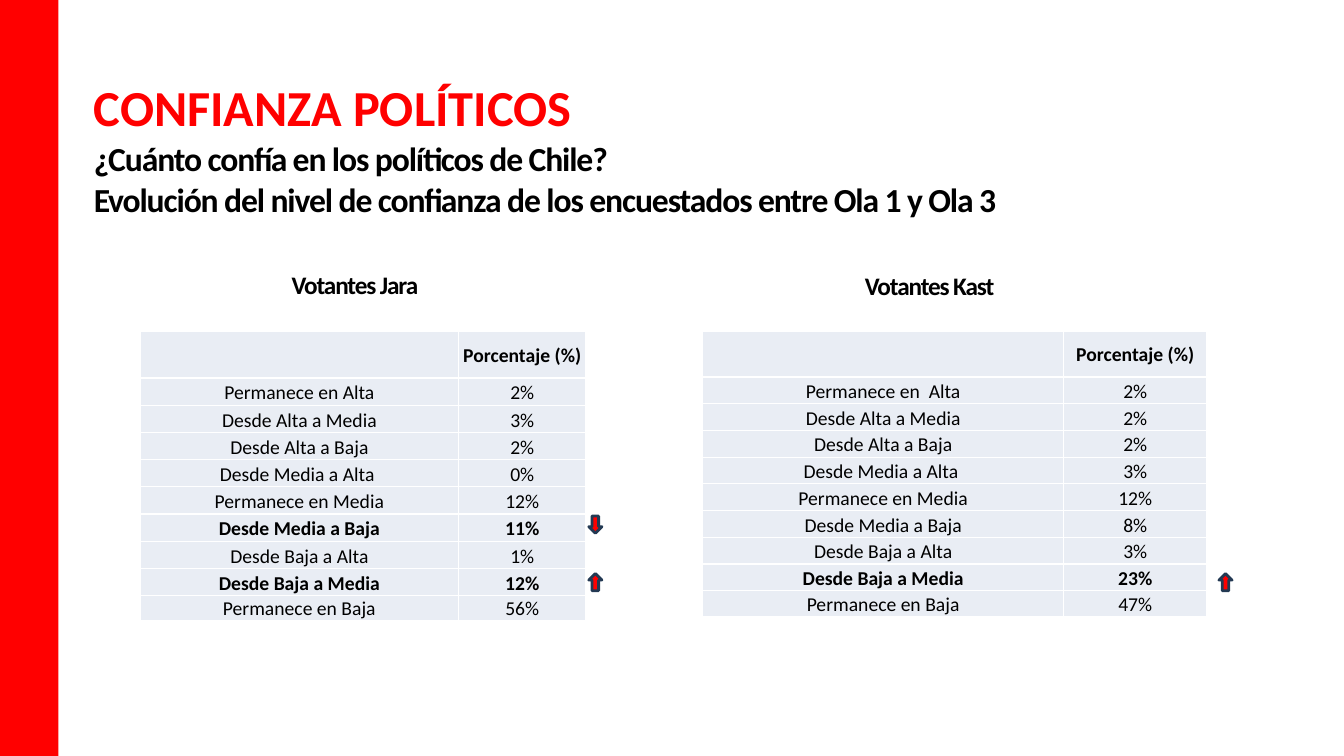
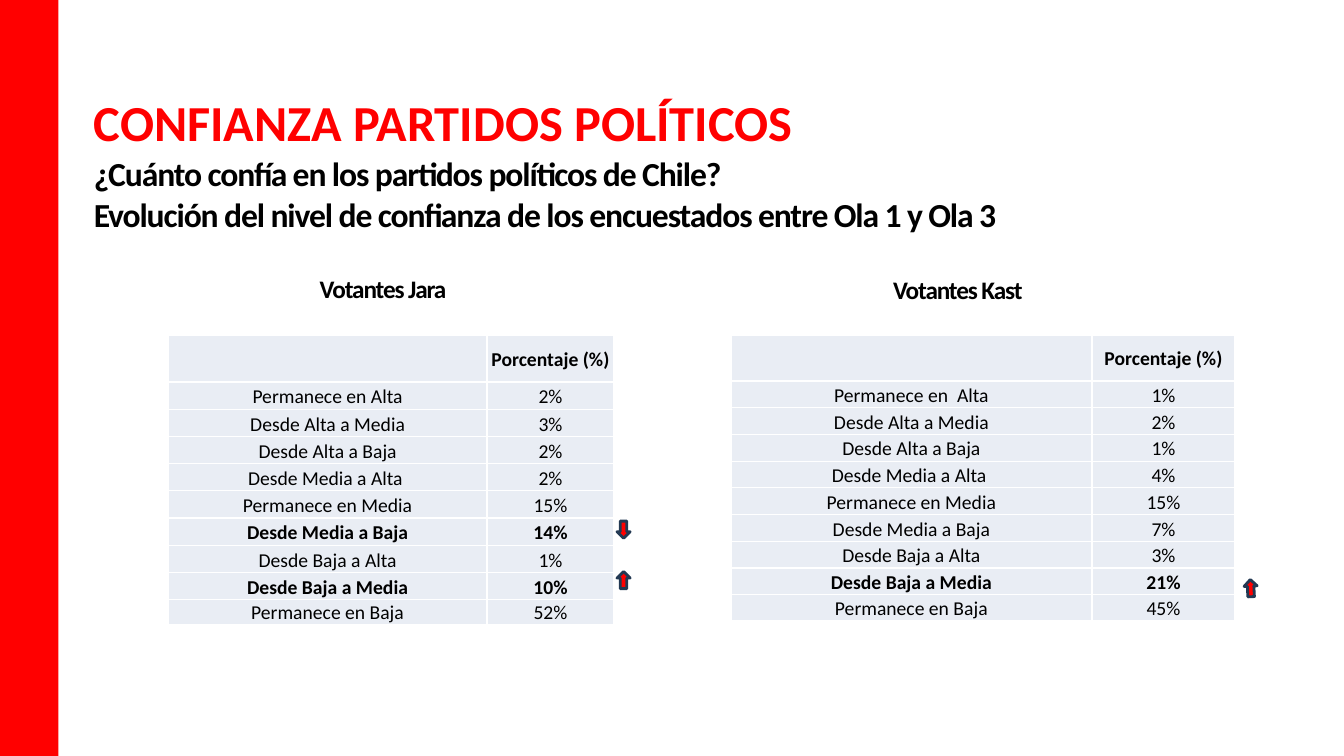
from dataclasses import dataclass

from lxml import etree
from pptx import Presentation
from pptx.dml.color import RGBColor
from pptx.enum.shapes import MSO_SHAPE
from pptx.enum.text import MSO_ANCHOR, MSO_AUTO_SIZE, PP_ALIGN
from pptx.oxml.ns import qn
from pptx.util import Inches, Pt

RECT, UP, DOWN = MSO_SHAPE.RECTANGLE, MSO_SHAPE.UP_ARROW, MSO_SHAPE.DOWN_ARROW
TOP, MIDDLE, BOTTOM = MSO_ANCHOR.TOP, MSO_ANCHOR.MIDDLE, MSO_ANCHOR.BOTTOM
LEFT, CENTER = PP_ALIGN.LEFT, PP_ALIGN.CENTER
FIXED = MSO_AUTO_SIZE.NONE
FONT = "Calibri"
RED, BLACK, WHITE, PALE, NAVY = "FF0000", "000000", "FFFFFF", "E9EDF4", "233953"
TITLE_ONLY = 5
TIGHT = -0.8
TREND = "Evolución del nivel de\u00a0confianza de los encuestados entre Ola 1 y Ola 3"
MOVES = ["Desde Alta a Media", "Desde Alta a Baja", "Desde Media a Alta ",
         "Permanece en Media", "Desde Media a Baja", "Desde Baja a Alta",
         "Desde Baja a Media", "Permanece en Baja"]


@dataclass(frozen=True)
class Group:
    """Layout of one voter group's table and caption."""
    name: str
    first: str
    left: float
    widths: tuple[float, float]
    head: float
    row: float
    last: float
    cap_x: float
    cap_y: float
    bold: tuple[int, ...]


@dataclass(frozen=True)
class Arrow:
    """A marker beside a table row."""
    kind: MSO_SHAPE
    left: float
    top: float
    turn: float = 0


@dataclass(frozen=True)
class Page:
    """Content of one slide."""
    title: str
    query: str
    title_y: float
    shift: float
    top: float
    shares: tuple[list[int], list[int]]
    arrows: list[Arrow]


GROUPS = (
    Group("Votantes Jara", "Permanece en Alta", 1.39, (3.16, 1.26),
          0.46, 0.27, 0.24, 2.02, -0.67, (5, 7)),
    Group("Votantes Kast", "Permanece en  Alta", 6.97, (3.58, 1.42),
          0.45, 0.265, 0.26, 7.72, -0.66, (7,)),
)
PAGES = [
    Page("CONFIANZA POLÍTICOS", "¿Cuánto confía en los políticos de Chile?",
         0.74, 0, 3.29,
         ([2, 3, 2, 0, 12, 11, 1, 12, 56], [2, 2, 2, 3, 12, 8, 3, 23, 47]),
         [Arrow(UP, 5.84, 5.69), Arrow(DOWN, 5.84, 5.12), Arrow(UP, 12.09, 5.69)]),
    Page("CONFIANZA PARTIDOS POLÍTICOS",
         "¿Cuánto confía en los partidos políticos de Chile?",
         0.89, 0.28, 3.33,
         ([2, 3, 2, 2, 15, 14, 1, 10, 52], [1, 2, 1, 4, 15, 7, 3, 21, 45]),
         [Arrow(UP, 6.12, 5.67), Arrow(DOWN, 6.12, 5.17),
          Arrow(UP, 12.34, 5.75, -2.9)]),
]


def shade(code: str) -> RGBColor:
    """Turn a hex string into a colour."""
    return RGBColor.from_string(code)


def write(para, text: str, *, size: float = 14, color: str = BLACK,
          bold: bool = True, align=CENTER, track: float = 0,
          before: float = 0) -> None:
    """Put formatted text into a paragraph."""
    para.alignment = align
    para.line_spacing = 1.0
    para.space_before = Pt(before)
    run = para.add_run()
    run.text = text
    font = run.font
    font.name, font.size, font.bold = FONT, Pt(size), bold
    font.color.rgb = shade(color)
    if track:
        font._element.set("spc", str(round(track * 100)))


def add_bar(prs, layout) -> None:
    """Place the red side band on the layout behind all else."""
    slide = prs.slides[0]
    bar = slide.shapes.add_shape(RECT, 0, 0, Inches(0.58), prs.slide_height)
    bar.shadow.inherit = False
    bar.fill.solid()
    bar.fill.fore_color.rgb = shade(RED)
    bar.line.fill.background()
    layout.shapes.element.insert(2, bar.element)


def add_title(slide, page: Page) -> None:
    """Fill the title placeholder with heading and question."""
    box = slide.shapes.title
    box.left, box.top = Inches(0.92), Inches(page.title_y)
    box.width, box.height = Inches(12.41), Inches(1.46)
    frame = box.text_frame
    frame.word_wrap, frame.auto_size = True, FIXED
    frame.vertical_anchor = TOP
    frame.margin_left = frame.margin_top = Inches(0.01)
    frame.margin_right = frame.margin_bottom = 0
    write(frame.paragraphs[0], page.title, size=36, color=RED, align=LEFT)
    for line in (page.query, TREND):
        write(frame.add_paragraph(), line, size=24, align=LEFT,
              track=TIGHT, before=1)


def style_cell(cell, anchor) -> None:
    """Give a cell its margins, white borders and pale fill."""
    cell.margin_left = cell.margin_right = cell.margin_top = Inches(0.01)
    cell.margin_bottom = 0
    cell.vertical_anchor = anchor
    props = cell._tc.get_or_add_tcPr()
    for side in "LRTB":
        edge = etree.SubElement(props, qn(f"a:ln{side}"), w=str(Pt(1)))
        fill = etree.SubElement(edge, qn("a:solidFill"))
        etree.SubElement(fill, qn("a:srgbClr"), val=WHITE)
    cell.fill.solid()
    cell.fill.fore_color.rgb = shade(PALE)


def add_group(slide, group: Group, page: Page, shares: list[int]) -> None:
    """Draw one caption and its table of shares."""
    rows = [("", "Porcentaje (%)")]
    rows += [(move, f"{share}%")
             for move, share in zip([group.first, *MOVES], shares)]
    tall = [group.head, *[group.row] * (len(rows) - 2), group.last]
    frame = slide.shapes.add_table(
        len(rows), 2, Inches(group.left + page.shift), Inches(page.top),
        Inches(sum(group.widths)), Inches(sum(tall)))
    table = frame.table
    table.first_row = table.horz_banding = False
    for col, width in zip(table.columns, group.widths):
        col.width = Inches(width)
    for i, (row, texts) in enumerate(zip(table.rows, rows)):
        row.height = Inches(tall[i])
        for cell, text in zip(row.cells, texts):
            style_cell(cell, BOTTOM if i else MIDDLE)
            if text:
                write(cell.text_frame.paragraphs[0], text,
                      bold=i == 0 or i - 1 in group.bold)
    box = slide.shapes.add_textbox(
        Inches(group.cap_x + page.shift), Inches(page.top + group.cap_y),
        Inches(3), Inches(0.4))
    box.text_frame.word_wrap = True
    write(box.text_frame.paragraphs[0], group.name, size=18, track=TIGHT)


def add_arrow(slide, arrow: Arrow) -> None:
    """Draw one trend arrow."""
    shape = slide.shapes.add_shape(
        arrow.kind, Inches(arrow.left), Inches(arrow.top),
        Inches(0.13), Inches(0.17))
    shape.shadow.inherit = False
    shape.rotation = arrow.turn
    shape.fill.solid()
    shape.fill.fore_color.rgb = shade(RED)
    shape.line.color.rgb = shade(NAVY)
    shape.line.width = Pt(2)


def main() -> None:
    """Build and save the slides."""
    prs = Presentation()
    prs.slide_width, prs.slide_height = Inches(13.33), Inches(7.5)
    layout = prs.slide_layouts[TITLE_ONLY]
    for page in PAGES:
        slide = prs.slides.add_slide(layout)
        add_title(slide, page)
        for group, shares in zip(GROUPS, page.shares):
            add_group(slide, group, page, shares)
        for arrow in page.arrows:
            add_arrow(slide, arrow)
    add_bar(prs, layout)
    prs.save("out.pptx")


if __name__ == "__main__":
    main()
